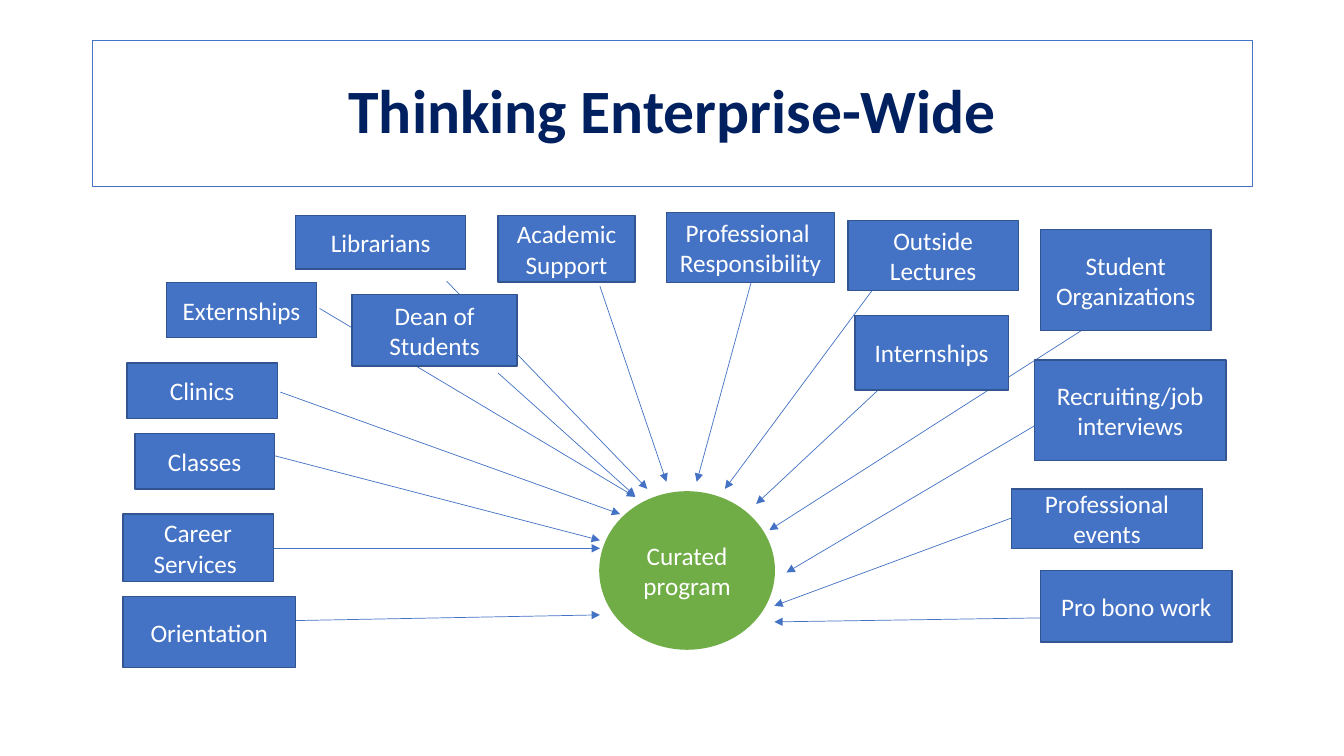
from dataclasses import dataclass

from pptx import Presentation, util as u
from pptx.dml.color import RGBColor
from pptx.enum import shapes, text
from pptx.oxml import ns
from lxml import etree

BLUE = RGBColor(0x44, 0x72, 0xC4)
EDGE = RGBColor(0x32, 0x54, 0x91)
GREEN = RGBColor(0x70, 0xAD, 0x47)
NAVY = RGBColor(0x00, 0x20, 0x60)
WHITE = RGBColor(0xFF, 0xFF, 0xFF)

HEAD = {"name": "Calibri", "size": u.Pt(44), "bold": True}
LABEL = {"name": "Calibri", "size": u.Pt(18), "bold": False}
FRAME = {
    "word_wrap": True,
    "auto_size": text.MSO_AUTO_SIZE.NONE,
    "vertical_anchor": text.MSO_ANCHOR.MIDDLE,
}


@dataclass
class Node:
    label: str
    left: float
    top: float
    width: float
    height: float
    kind: int = shapes.MSO_SHAPE.RECTANGLE
    fill: RGBColor = BLUE
    edge: RGBColor = EDGE


@dataclass
class Arrow:
    x: float
    y: float
    to_x: float
    to_y: float


HUB = Node("Curated program", 5.95, 4.88, 1.73, 1.56,
           shapes.MSO_SHAPE.OVAL, GREEN, GREEN)
UNITS = [
    Node("Orientation", 1.22, 5.92, 1.71, 0.7),
    Node("Career Services ", 1.22, 5.1, 1.49, 0.67),
    Node("Classes", 1.34, 4.3, 1.38, 0.55),
    Node("Clinics", 1.26, 3.6, 1.49, 0.55),
    Node("Externships", 1.65, 2.8, 1.49, 0.55),
    Node("Librarians", 2.93, 2.14, 1.69, 0.53),
    Node("Dean of Students", 3.49, 2.92, 1.64, 0.71),
    Node("Academic Support", 4.94, 2.14, 1.36, 0.66),
    Node("Professional \nResponsibility", 6.61, 2.11, 1.67, 0.69),
    Node("Outside\nLectures", 8.41, 2.19, 1.69, 0.69),
    Node("Internships", 8.48, 3.13, 1.52, 0.74),
    Node("Student Organizations", 10.32, 2.28, 1.69, 1),
    Node("Recruiting/job interviews", 10.26, 3.57, 1.9, 1),
    Node("Professional\nevents", 10.03, 4.85, 1.9, 0.59),
    Node("Pro bono work", 10.32, 5.66, 1.9, 0.71),
]
# One arrow per unit, in the same order
ARROWS = [
    Arrow(2.22, 6.17, 5.95, 6.1),
    Arrow(2.72, 5.44, 5.95, 5.44),
    Arrow(2.41, 4.44, 5.95, 5.36),
    Arrow(2.78, 3.89, 6.15, 5.1),
    Arrow(3.17, 3.06, 6.3, 4.93),
    Arrow(4.43, 2.79, 6.42, 4.85),
    Arrow(4.94, 3.7, 6.3, 4.92),
    Arrow(5.95, 2.84, 6.61, 4.78),
    Arrow(7.45, 2.8, 6.91, 4.78),
    Arrow(8.71, 2.8, 7.19, 4.85),
    Arrow(9.18, 3.43, 7.5, 5),
    Arrow(11.1, 3.04, 7.63, 5.26),
    Arrow(10.42, 4.13, 7.8, 5.68),
    Arrow(10.03, 5.14, 7.68, 6.01),
    Arrow(10.32, 6.13, 7.68, 6.17),
]


def apply(item, values: dict) -> None:
    for name, value in values.items():
        setattr(item, name, value)


def stroke(line, color: RGBColor, width: float) -> None:
    line.color.rgb = color
    line.width = u.Pt(width)


def write(shape, words: str, style: dict, color: RGBColor,
          space: float = 1.0) -> None:
    frame = shape.text_frame
    frame.text = words
    apply(frame, FRAME)
    for para in frame.paragraphs:
        apply(para, {"alignment": text.PP_ALIGN.CENTER, "line_spacing": space})
        for run in para.runs:
            apply(run.font, style)
            run.font.color.rgb = color


def add_title(slide) -> None:
    title = slide.shapes.title
    apply(title, {"left": u.Inches(0.92), "top": u.Inches(0.4),
                  "width": u.Inches(11.5), "height": u.Inches(1.45)})
    stroke(title.line, BLUE, 0.75)
    write(title, "Thinking Enterprise-Wide", HEAD, NAVY, 0.9)


def add_arrow(slide, arrow: Arrow) -> None:
    ends = (u.Inches(v) for v in (arrow.x, arrow.y, arrow.to_x, arrow.to_y))
    link = slide.shapes.add_connector(shapes.MSO_CONNECTOR.STRAIGHT, *ends)
    stroke(link.line, BLUE, 0.5)
    props = link.element.spPr
    tip = etree.SubElement(props.find(ns.qn("a:ln")), ns.qn("a:tailEnd"))
    tip.set("type", "triangle")
    etree.SubElement(props, ns.qn("a:effectLst"))


def add_node(slide, node: Node) -> None:
    box = (u.Inches(v) for v in (node.left, node.top, node.width, node.height))
    shape = slide.shapes.add_shape(node.kind, *box)
    shape.shadow.inherit = False
    shape.fill.solid()
    shape.fill.fore_color.rgb = node.fill
    stroke(shape.line, node.edge, 1)
    write(shape, node.label, LABEL, WHITE)


def main() -> None:
    deck = Presentation()
    deck.slide_width = u.Inches(13.33)
    deck.slide_height = u.Inches(7.5)
    slide = deck.slides.add_slide(deck.slide_layouts.get_by_name("Title Only"))
    add_title(slide)
    for arrow in ARROWS:
        add_arrow(slide, arrow)
    for node in [HUB, *UNITS]:
        add_node(slide, node)
    deck.save("out.pptx")


if __name__ == "__main__":
    main()
